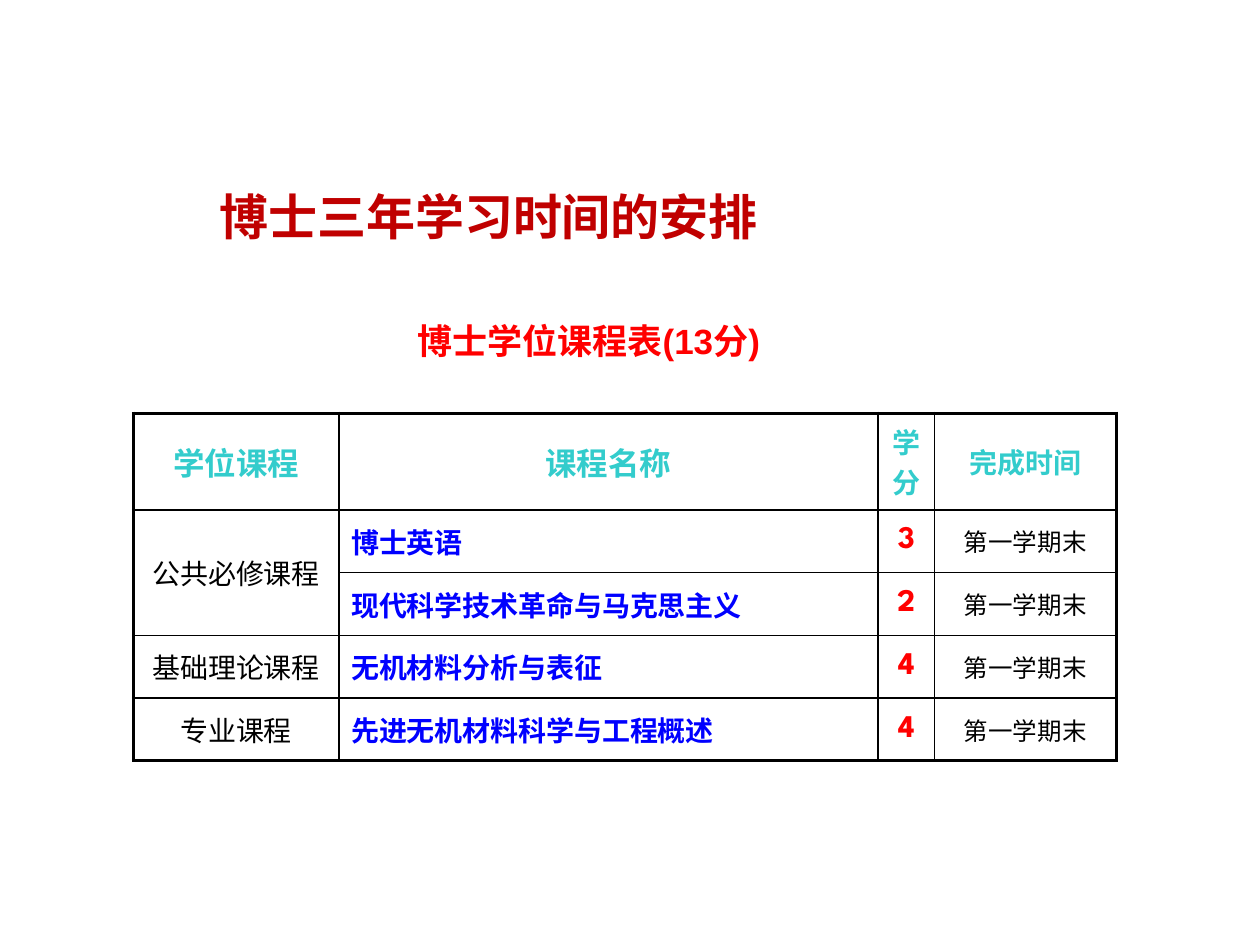
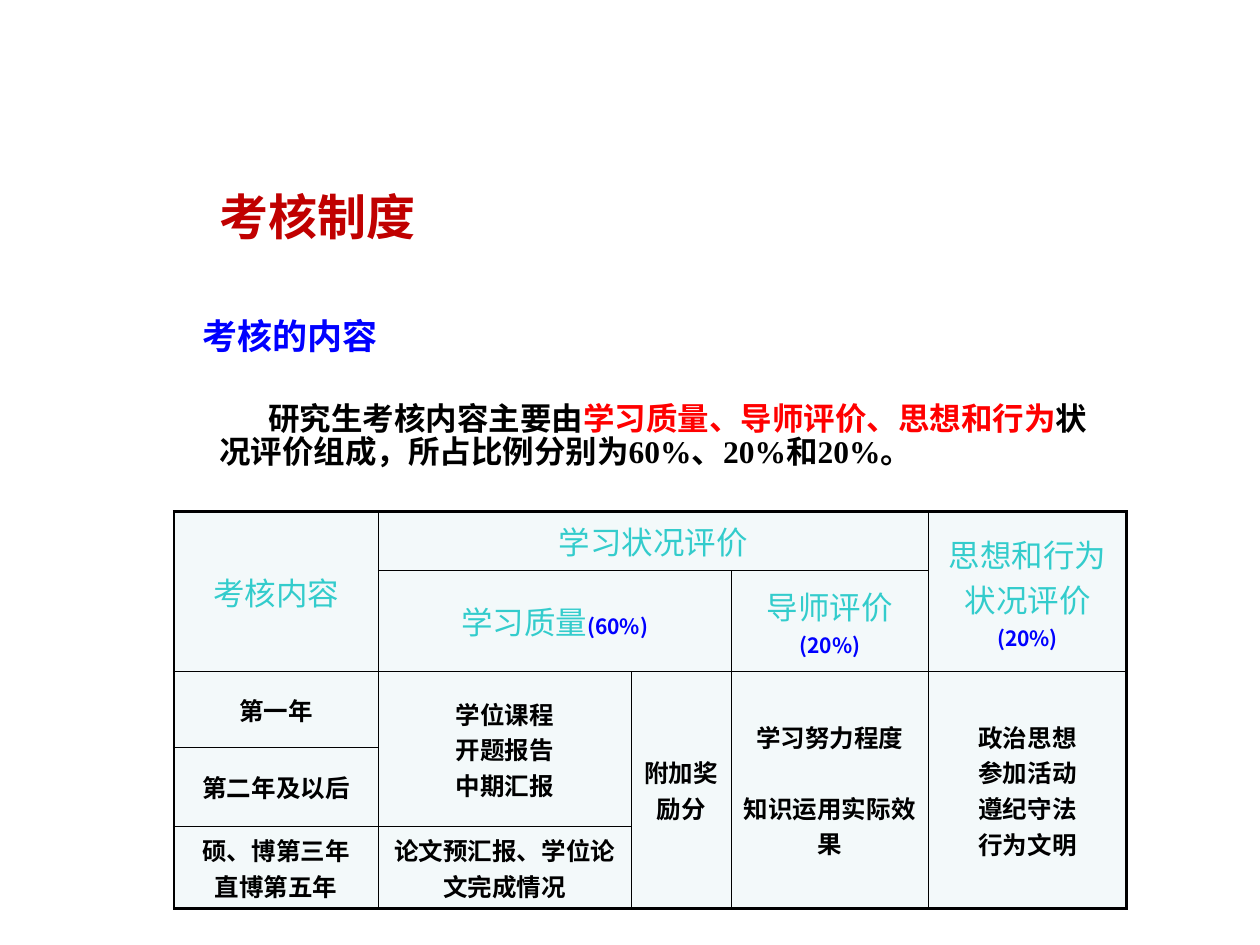
from dataclasses import dataclass, replace
from itertools import product

from lxml.etree import SubElement
from pptx import Presentation
from pptx.dml.color import RGBColor
from pptx.enum.text import MSO_ANCHOR, MSO_AUTO_SIZE, PP_ALIGN
from pptx.oxml.ns import qn
from pptx.util import Cm, Pt


@dataclass(frozen=True)
class Style:
    """Look of a piece of text."""
    size: int
    color: str
    bold: bool = True
    font: str = "Noto Sans CJK SC"


@dataclass(frozen=True)
class Theme:
    """Colours, type styles and the title box shared by the slides."""
    line: str = "000000"
    cell: str = "F3F9FA"
    east_asian: str = "Noto Sans CJK SC"
    no_table_style: str = "{2D5ABB26-0587-4C30-8999-92F81FD0307C}"
    title: Style = Style(28, "C00000")
    caption: Style = Style(20, "FF0000")
    section: Style = Style(20, "0000FF")
    body: Style = Style(18, "000000")
    head: Style = Style(18, "33CCCC")
    course: Style = Style(16, "0000FF")
    kind: Style = Style(16, "000000", False)
    credit: Style = Style(18, "FF0000", font="League Spartan")
    term: Style = Style(14, "000000", False)
    share: Style = Style(12, "0000FF")
    detail: Style = Style(14, "000000")
    title_box: tuple = (4.17, 3.76, 12.7, 1.45)


T = Theme()
LIGHT_HEAD = replace(T.head, bold=False)


@dataclass
class Cell:
    """Table cell: paragraphs of (text, style) runs, with its place and span."""
    row: int
    col: int
    paragraphs: list
    rows: int = 1
    cols: int = 1
    align: PP_ALIGN = PP_ALIGN.CENTER
    gap: float = 0


def set_font(font, style):
    """Apply a style to a paragraph or run font."""
    font.size, font.bold = Pt(style.size), style.bold
    font.color.rgb = RGBColor.from_string(style.color)
    font.name = style.font


def write(tf, paragraphs, align=PP_ALIGN.LEFT, spacing=None, gap=0):
    """Fill a text frame with paragraphs of (text, style) runs."""
    tf.word_wrap = True
    for i, runs in enumerate(paragraphs):
        p = tf.add_paragraph() if i else tf.paragraphs[0]
        p.alignment = align
        if spacing:
            p.line_spacing = spacing
        if i and gap:
            p.space_before = Pt(gap)
        base = runs[0][1]
        set_font(p.font, base)
        SubElement(p._p.pPr.find(qn("a:defRPr")), qn("a:ea"), typeface=T.east_asian)
        for text, style in runs:
            r = p.add_run()
            r.text = text
            if style != base:
                set_font(r.font, style)


def add_title(slide, text):
    """Place and format the title placeholder."""
    sp = slide.shapes.title
    sp.left, sp.top, sp.width, sp.height = map(Cm, T.title_box)
    tf = sp.text_frame
    tf.auto_size, tf.vertical_anchor = MSO_AUTO_SIZE.NONE, MSO_ANCHOR.TOP
    write(tf, [[(text, T.title)]], spacing=0.9)


def add_text(slide, box, runs, align=PP_ALIGN.LEFT, anchor=MSO_ANCHOR.MIDDLE,
             spacing=0.86, margin=0, indent=0):
    """Add a one-paragraph text box."""
    tf = slide.shapes.add_textbox(*map(Cm, box)).text_frame
    tf.vertical_anchor = anchor
    write(tf, [runs], align, spacing)
    pPr = tf.paragraphs[0]._p.pPr
    pPr.set("marL", str(Cm(margin)))
    pPr.set("indent", str(Cm(indent)))


def add_border(tcPr, side, width):
    """Append one cell border line."""
    ln = SubElement(tcPr, qn(f"a:ln{side}"), w=str(Pt(width)))
    fill = SubElement(ln, qn("a:solidFill"))
    SubElement(fill, qn("a:srgbClr"), val=T.line)


def draw_cell(table, cell, inner, outer, fill, margins):
    """Merge, border, fill and write one cell region."""
    top, left = cell.row, cell.col
    bottom, right = top + cell.rows - 1, left + cell.cols - 1
    origin = table.cell(top, left)
    if (top, left) != (bottom, right):
        origin.merge(table.cell(bottom, right))
    last_row, last_col = len(table.rows) - 1, len(table.columns) - 1
    at_rim = {"L": left == 0, "R": right == last_col, "T": top == 0, "B": bottom == last_row}
    for row, col in product(range(top, bottom + 1), range(left, right + 1)):
        tc = table.cell(row, col)
        tcPr = tc._tc.get_or_add_tcPr()
        on_edge = {"L": col == left, "R": col == right, "T": row == top, "B": row == bottom}
        for side, rim in at_rim.items():
            if on_edge[side] or (row, col) == (top, left):
                add_border(tcPr, side, outer if rim else inner)
        if fill:
            tc.fill.solid()
            tc.fill.fore_color.rgb = RGBColor.from_string(fill)
        else:
            tc.fill.background()
    origin.vertical_anchor = MSO_ANCHOR.MIDDLE
    origin.margin_left = origin.margin_right = Cm(margins[0])
    origin.margin_top = origin.margin_bottom = Cm(margins[1])
    write(origin.text_frame, cell.paragraphs, cell.align, gap=cell.gap)


def add_grid(slide, box, col_shares, row_shares, cells, inner, outer, margins, fill=None):
    """Add a table whose columns and rows share out the given box."""
    x, y, w, h = box
    table = slide.shapes.add_table(len(row_shares), len(col_shares), *map(Cm, box)).table
    table.first_row = table.horz_banding = False
    table._tbl.tblPr.find(qn("a:tableStyleId")).text = T.no_table_style
    for col, share in zip(table.columns, col_shares):
        col.width = Cm(w * share / sum(col_shares))
    for row, share in zip(table.rows, row_shares):
        row.height = Cm(h * share / sum(row_shares))
    for cell in cells:
        draw_cell(table, cell, inner, outer, fill, margins)


def lines(style, *texts):
    """Make one single-run paragraph per text."""
    return [[(text, style)] for text in texts]


def course_cells():
    """List the cells of the course table."""
    small_head = replace(T.head, size=16)
    heads = [("学位课程", T.head), ("课程名称", T.head), ("学分", small_head), ("完成时间", small_head)]
    cells = [Cell(0, col, [[head]]) for col, head in enumerate(heads)]
    kinds = [("公共必修课程", 1, 2), ("基础理论课程", 3, 1), ("专业课程", 4, 1)]
    cells += [Cell(row, 0, lines(T.kind, kind), rows=span) for kind, row, span in kinds]
    courses = [("博士英语", "3"), ("现代科学技术革命与马克思主义", "2"),
               ("无机材料分析与表征", "4"), ("先进无机材料科学与工程概述", "4")]
    for row, (course, credit) in enumerate(courses, 1):
        cells += [Cell(row, 1, lines(T.course, course), align=PP_ALIGN.LEFT),
                  Cell(row, 2, lines(T.credit, credit)),
                  Cell(row, 3, lines(T.term, "第一学期末"))]
    return cells


def assessment_cells():
    """List the cells of the assessment table."""
    def weighted(text, share):
        return [(text, LIGHT_HEAD), (share, T.share)]

    return [
        Cell(0, 0, lines(LIGHT_HEAD, "考核内容"), rows=2),
        Cell(0, 1, lines(LIGHT_HEAD, "学习状况评价"), cols=3),
        Cell(0, 4, lines(LIGHT_HEAD, "思想和行为") + [weighted("状况评价", "(20%)")], rows=2),
        Cell(1, 1, [weighted("学习质量", "(60%)")], cols=2),
        Cell(1, 3, [weighted("导师评价", "(20%)")]),
        Cell(2, 0, lines(T.detail, "第一年")),
        Cell(3, 0, lines(T.detail, "第二年及以后")),
        Cell(4, 0, lines(T.detail, "硕、博第三年", "直博第五年")),
        Cell(2, 1, lines(T.detail, "学位课程", "开题报告", "中期汇报"), rows=2),
        Cell(4, 1, lines(T.detail, "论文预汇报、学位论文完成情况")),
        Cell(2, 2, lines(T.detail, "附加奖励分"), rows=3),
        Cell(2, 3, lines(T.detail, "学习努力程度", "知识运用实际效果"), rows=3, gap=20),
        Cell(2, 4, lines(T.detail, "政治思想", "参加活动", "遵纪守法", "行为文明"), rows=3),
    ]


def build_courses(slide):
    """Build the slide with the degree course table."""
    add_title(slide, "博士三年学习时间的安排")
    add_text(slide, (8.13, 6.38, 7.47, 1.12),
             [("博士学位课程表", T.caption), ("(13分)", replace(T.caption, font="Arial"))],
             align=PP_ALIGN.CENTER, spacing=0.83)
    add_grid(slide, (2.69, 8.33, 19.81, 7.01), (1.63, 4.28, 0.45, 1.44),
             (0.77, 0.5, 0.5, 0.5, 0.5), course_cells(), 1, 2, (0.25, 0.13))


def build_assessment(slide):
    """Build the slide with the assessment rules."""
    add_title(slide, "考核制度")
    add_text(slide, (2.59, 6.15, 21.23, 1.57), [("考核的内容", T.section)],
             anchor=MSO_ANCHOR.TOP, spacing=1.08, margin=1.24)
    add_text(slide, (4.17, 7.7, 18.54, 2.24), [
        ("研究生考核内容主要由", T.body),
        ("学习质量、导师评价、思想和行为", replace(T.body, color="FF0000")),
        ("状况评价组成，所占比例分别为", T.body),
        ("60%、20%和20%。", replace(T.body, font="Times New Roman"))], indent=0.99)
    add_grid(slide, (3.51, 10.31, 19.2, 7.19), (1.62, 2.01, 0.79, 1.57, 1.57),
             (0.47, 0.48, 0.6, 0.63, 0.65), assessment_cells(), 0.5, 1.5, (0.2, 0), T.cell)


def main():
    """Build and save the presentation."""
    prs = Presentation()
    prs.slide_width, prs.slide_height = Cm(25.4), Cm(19.05)
    for build in (build_courses, build_assessment):
        build(prs.slides.add_slide(prs.slide_layouts[5]))
    prs.save("out.pptx")


if __name__ == "__main__":
    main()
